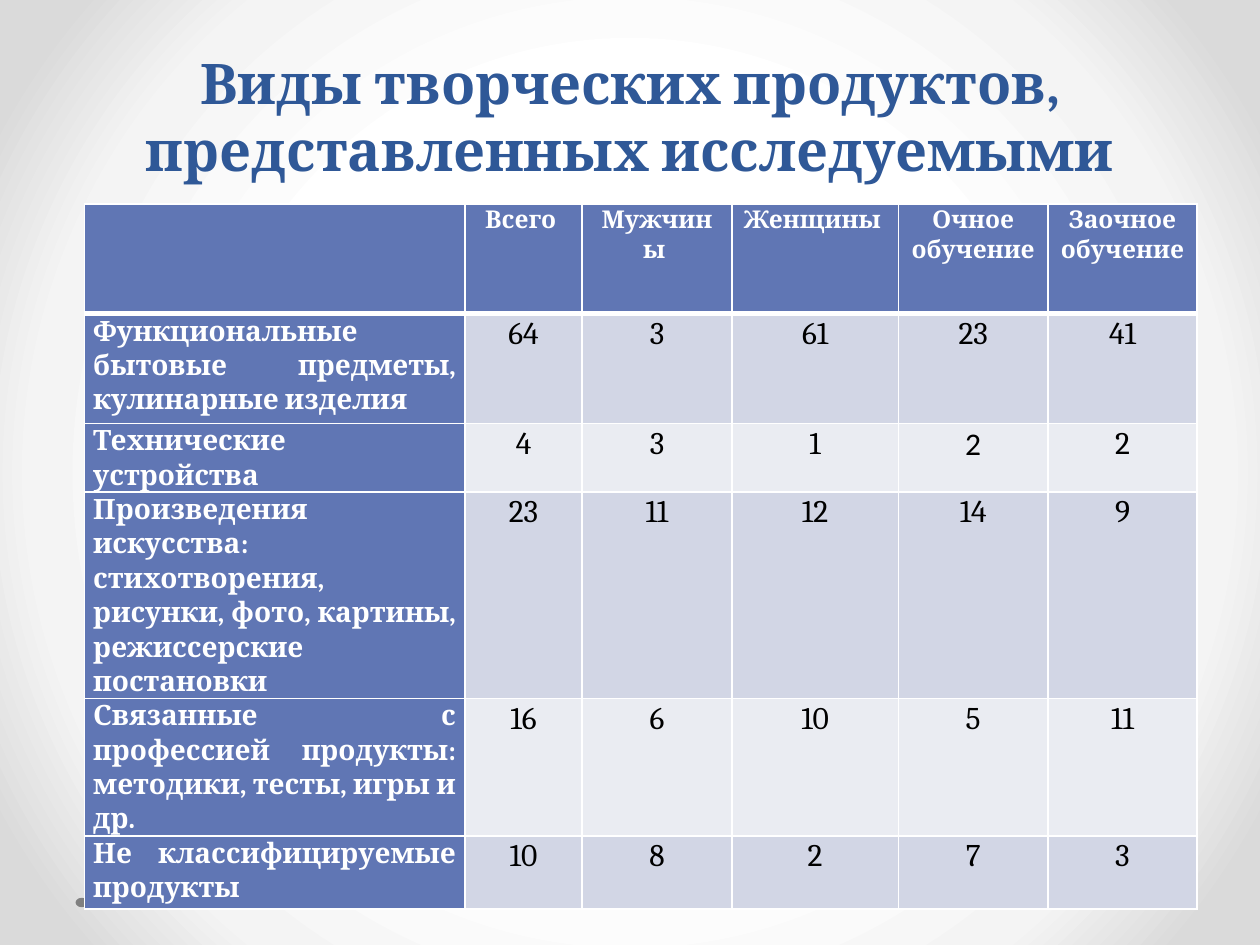
from dataclasses import dataclass

from lxml import etree
from pptx import Presentation
from pptx import util as u
from pptx.dml.color import RGBColor
from pptx.enum import shapes, text
from pptx.oxml import ns, parse_xml


@dataclass(frozen=True)
class Theme:
    serif: str = "Cambria"
    sans: str = "Calibri"
    title: str = "2F5897"
    heading: str = "6076B4"
    bands: tuple = ("D2D6E5", "EAECF2")
    white: str = "FFFFFF"
    ink: str = "000000"
    dot: str = "808080"
    backdrop: tuple = ((50, "FFFFFF"), (76, "F4F4F4"), (92, "DADADA"))
    title_size: int = 32
    header_size: int = 14
    label_size: int = 16
    value_size: int = 18


def apply(target, values):
    for name, value in values.items():
        setattr(target, name, value)


class Deck:
    def __init__(self, theme):
        self.theme = theme
        self.show = Presentation()
        apply(self.show, {"slide_width": u.Inches(10), "slide_height": u.Inches(7.5)})
        self.slide = self.show.slides.add_slide(self.show.slide_layouts[5])

    def box(self, left, top, width, height):
        across, down = self.show.slide_width, self.show.slide_height
        return [round(share * side) for share, side in
                zip((left, top, width, height), (across, down, across, down))]

    def backdrop(self):
        stops = "".join(
            f'<a:gs pos="{pos * 1000}"><a:srgbClr val="{color}"/></a:gs>'
            for pos, color in self.theme.backdrop)
        background = parse_xml(
            f'<p:bg {ns.nsdecls("p", "a")}><p:bgPr><a:gradFill rotWithShape="1">'
            f'<a:gsLst>{stops}</a:gsLst><a:path path="circle">'
            '<a:fillToRect l="50000" t="50000" r="50000" b="50000"/></a:path>'
            '</a:gradFill><a:effectLst/></p:bgPr></p:bg>')
        self.slide.element.cSld.insert(0, background)

    def wording(self, paragraph, words, size, color, bold, face=None):
        run = paragraph.add_run()
        run.text = words
        apply(run.font, {"name": face or self.theme.serif, "size": u.Pt(size), "bold": bold})
        run.font.color.rgb = RGBColor.from_string(color)

    def title(self, words, place):
        heading = self.slide.shapes.title
        apply(heading, dict(zip(("left", "top", "width", "height"), self.box(*place))))
        frame = heading.text_frame
        apply(frame, {"word_wrap": True, "auto_size": text.MSO_AUTO_SIZE.NONE,
                      "vertical_anchor": text.MSO_ANCHOR.BOTTOM})
        frame.paragraphs[0].alignment = text.PP_ALIGN.CENTER
        self.wording(frame.paragraphs[0], words, self.theme.title_size, self.theme.title, True)

    def dot(self, place):
        dot = self.slide.shapes.add_shape(shapes.MSO_SHAPE.OVAL, *self.box(*place))
        dot.shadow.inherit = False
        dot.fill.solid()
        dot.fill.fore_color.rgb = RGBColor.from_string(self.theme.dot)
        dot.line.fill.background()

    def borders(self, cell, row):
        widths = {"L": 1, "R": 1, "T": 3 if row == 1 else 1, "B": 3 if row == 0 else 1}
        properties = cell._tc.get_or_add_tcPr()
        for order, (side, width) in enumerate(widths.items()):
            line = etree.Element(ns.qn(f"a:ln{side}"), w=str(u.Pt(width)))
            fill = etree.SubElement(line, ns.qn("a:solidFill"))
            etree.SubElement(fill, ns.qn("a:srgbClr"), val=self.theme.white)
            properties.insert(order, line)

    def cell(self, cell, row, column, words, face):
        theme = self.theme
        heading = row == 0 or column == 0
        cell.fill.solid()
        cell.fill.fore_color.rgb = RGBColor.from_string(
            theme.heading if heading else theme.bands[(row - 1) % 2])
        self.borders(cell, row)
        apply(cell, {"margin_left": u.Inches(0.07), "margin_right": u.Inches(0.07),
                     "margin_top": 0, "margin_bottom": 0})
        if not words:
            return
        size = (theme.header_size if row == 0 else
                theme.label_size if column == 0 else theme.value_size)
        paragraph = cell.text_frame.paragraphs[0]
        apply(paragraph, {
            "alignment": text.PP_ALIGN.CENTER if column else text.PP_ALIGN.JUSTIFY,
            "line_spacing": 1.07, "space_after": u.Pt(8)})
        self.wording(paragraph, words, size, theme.white if heading else theme.ink, heading, face)

    def table(self, records, place, widths, heights, faces):
        grid = self.slide.shapes.add_table(
            len(records), len(widths), *self.box(*place)).table
        for column, width in zip(grid.columns, widths):
            column.width = u.Inches(width)
        for row, height in zip(grid.rows, heights):
            row.height = u.Inches(height)
        for row, record in enumerate(records):
            for column, words in enumerate(record):
                self.cell(grid.cell(row, column), row, column, str(words),
                          faces.get((row, column)))


PRODUCTS = [
    ("", "Всего ", "Мужчины ", "Женщины ", "Очное обучение", "Заочное обучение"),
    ("Функциональные бытовые предметы, кулинарные изделия", 64, 3, 61, 23, 41),
    ("Технические устройства", 4, 3, 1, 2, 2),
    ("Произведения искусства: стихотворения, рисунки, фото, картины, "
     "режиссерские постановки", 23, 11, 12, 14, 9),
    ("Связанные с профессией продукты: методики, тесты, игры и др.", 16, 6, 10, 5, 11),
    ("Не классифицируемые продукты ", 10, 8, 2, 7, 3),
]


def main():
    theme = Theme()
    deck = Deck(theme)
    deck.backdrop()
    deck.dot((0.06, 0.95, 0.01, 0.01))
    deck.title("Виды творческих продуктов, представленных исследуемыми",
               (0.05, 0.01, 0.9, 0.19))
    deck.table(PRODUCTS, (0.067, 0.216, 0.883, 0.656),
               widths=(3.02, 0.93, 1.19, 1.32, 1.19, 1.18),
               heights=(0.87, 0.87, 0.28, 1.05, 0.71, 0.58),
               faces={(2, 4): theme.sans})
    deck.show.save("out.pptx")


if __name__ == "__main__":
    main()
